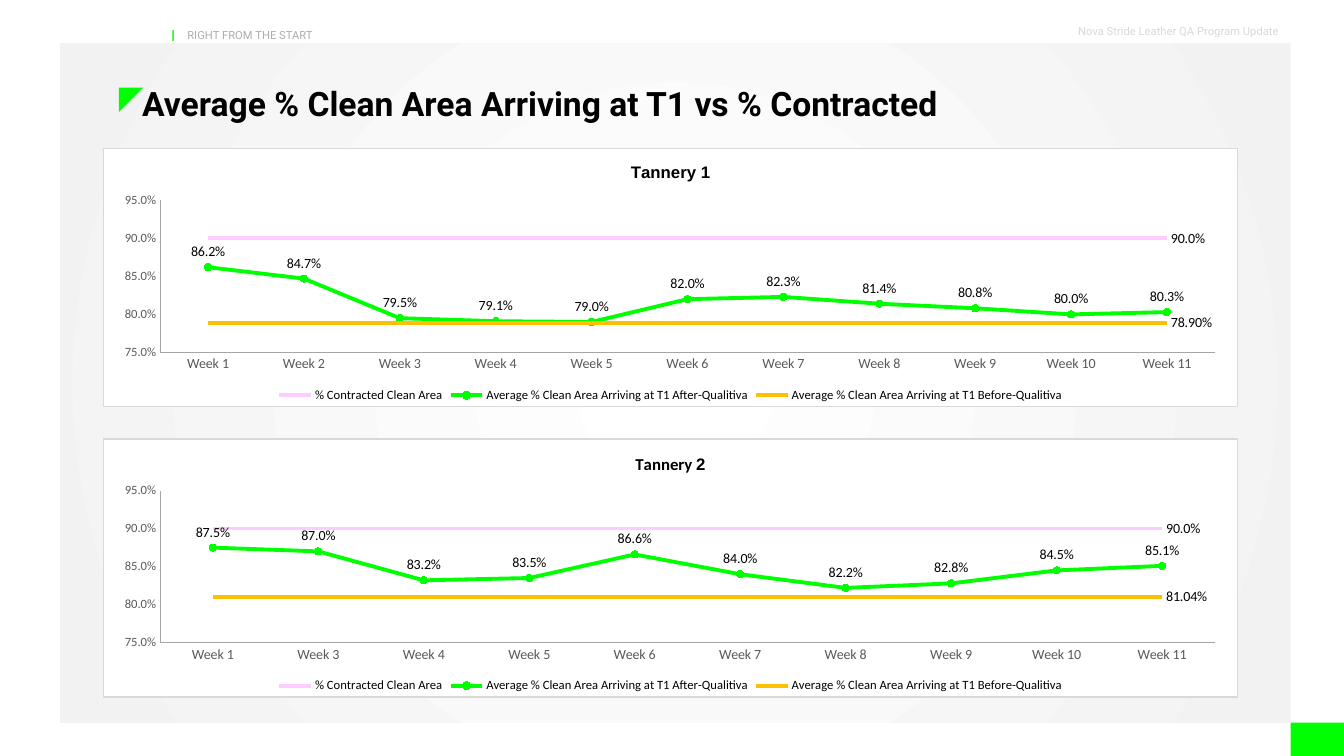
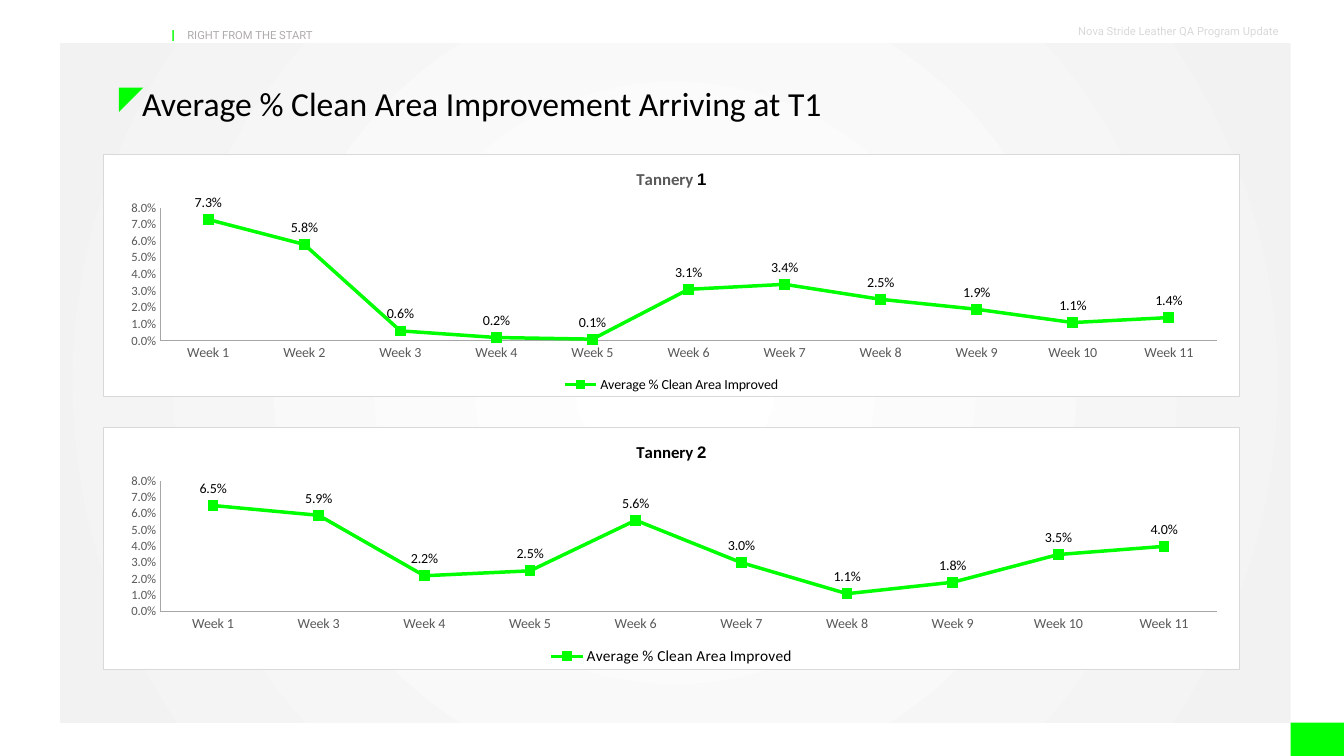
from dataclasses import dataclass

from pptx import Presentation
from pptx.chart.chart import Chart
from pptx.chart.data import CategoryChartData
from pptx.dml.color import RGBColor
from pptx.enum.chart import XL_CHART_TYPE as ChartType
from pptx.enum.chart import XL_LABEL_POSITION as LabelPosition
from pptx.enum.chart import XL_LEGEND_POSITION as LegendPosition
from pptx.enum.chart import XL_MARKER_STYLE as MarkerStyle
from pptx.enum.chart import XL_TICK_MARK as TickMark
from pptx.enum.shapes import MSO_SHAPE as Preset
from pptx.enum.shapes import PP_PLACEHOLDER as PlaceholderType
from pptx.enum.text import MSO_ANCHOR as Anchor
from pptx.enum.text import MSO_AUTO_SIZE as AutoSize
from pptx.enum.text import PP_ALIGN as Align
from pptx.oxml import parse_xml
from pptx.oxml.ns import nsdecls, qn
from pptx.util import Inches, Pt

GREEN, PINK, AMBER = "00FF00", "FFCCFF", "FFC000"
BLACK, WHITE, SMOKE = "000000", "FFFFFF", "F2F2F2"
AXIS_TEXT, AXIS_LINE, BORDER = "595959", "A6A6A6", "D9D9D9"
HEADER_GREY, TAGLINE_GREY = "D9D9D9", "AFABAB"


@dataclass
class Trend:
    name: str
    values: list[float]
    colour: str = GREEN
    width: float = 2.75
    marker: MarkerStyle = MarkerStyle.NONE
    marker_size: int = 5
    number_format: str = "0.0%"
    label_last_only: bool = False


@dataclass
class Scale:
    low: float
    high: float
    step: float


@dataclass
class TanneryChart:
    number: int
    weeks: list[int]
    trends: list[Trend]
    top: float
    plot: tuple[float, float, float, float]
    legend_size: int = 9
    word_font: str = "Calibri"
    word_colour: str = BLACK


@dataclass
class Page:
    title: str
    title_font: str
    title_bold: bool
    width: float
    height: float
    scale: Scale
    charts: list[TanneryChart]


def colour(code: str) -> RGBColor:
    return RGBColor.from_string(code)


def set_font(font, name: str, size: float, code: str, bold: bool = False) -> None:
    font.name, font.size, font.bold = name, Pt(size), bold
    font.color.rgb = colour(code)


def add_block(slide, preset: Preset, left: float, top: float,
              width: float, height: float, code: str):
    block = slide.shapes.add_shape(
        preset, Inches(left), Inches(top), Inches(width), Inches(height))
    block.shadow.inherit = False
    block.line.fill.background()
    block.fill.solid()
    block.fill.fore_color.rgb = colour(code)
    return block


def add_header(slide, text: str, left: float, top: float, width: float,
               size: float, code: str, align: Align = Align.LEFT) -> None:
    box = slide.shapes.add_textbox(
        Inches(left), Inches(top), Inches(width), Inches(0.24))
    box.text_frame.word_wrap = False
    line = box.text_frame.paragraphs[0]
    line.text, line.alignment = text, align
    set_font(line.font, "Roboto", size, code)


def add_glow(panel) -> None:
    """Fill the panel with a round gradient, white in the middle."""
    panel.fill.gradient()
    for stop, code in zip(panel.fill.gradient_stops, (WHITE, SMOKE)):
        stop.color.rgb = colour(code)
    gradient = panel.element.spPr.find(qn("a:gradFill"))
    for linear in gradient.findall(qn("a:lin")):
        gradient.remove(linear)
    gradient.append(parse_xml(
        f'<a:path {nsdecls("a")} path="circle"><a:fillToRect l="50000" '
        't="50000" r="50000" b="50000"/></a:path>'))


def furnish_layout(layout, slide) -> None:
    """Draw the shared frame on the slide, then move it to the layout."""
    for holder in list(layout.placeholders):
        if holder.placeholder_format.type != PlaceholderType.TITLE:
            layout.shapes.element.remove(holder.element)
    add_glow(add_block(slide, Preset.RECTANGLE, 0.59, 0.43, 12.21, 6.74, WHITE))
    add_block(slide, Preset.RECTANGLE, 12.8, 7.17, 0.53, 0.33, GREEN)
    add_header(slide, "Nova Stride Leather QA Program Update",
               10.51, 0.19, 2.36, 8, HEADER_GREY, Align.CENTER)
    add_header(slide, "I", 1.6, 0.21, 0.4, 11, GREEN)
    add_header(slide, "RIGHT FROM THE START", 1.76, 0.23, 1.5, 8, TAGLINE_GREY)
    corner = add_block(slide, Preset.RIGHT_TRIANGLE, 1.18, 0.87, 0.24, 0.24, GREEN)
    corner.element.spPr.find(qn("a:xfrm")).set("flipV", "1")
    for part in list(slide.shapes):
        if not part.is_placeholder:
            layout.shapes.element.append(part.element)


def write_title(slide, page: Page) -> None:
    title = slide.shapes.title
    title.left, title.top = Inches(1.31), Inches(0.77)
    title.width, title.height = Inches(10.95), Inches(0.5)
    frame = title.text_frame
    frame.word_wrap, frame.vertical_anchor = True, Anchor.TOP
    frame.auto_size = AutoSize.SHAPE_TO_FIT_TEXT
    heading = frame.paragraphs[0]
    heading.text, heading.alignment = page.title, Align.JUSTIFY
    set_font(heading.font, page.title_font, 24, BLACK, page.title_bold)


def style_axis(axis, size: float) -> None:
    axis.has_major_gridlines = False
    axis.major_tick_mark = axis.minor_tick_mark = TickMark.NONE
    axis.format.line.color.rgb = colour(AXIS_LINE)
    axis.format.line.width = Pt(0.75)
    set_font(axis.tick_labels.font, "Calibri", size, AXIS_TEXT)


def style_trend(series, trend: Trend) -> None:
    series.smooth = False
    series.format.line.color.rgb = colour(trend.colour)
    series.format.line.width = Pt(trend.width)
    series.marker.style = trend.marker
    if trend.marker != MarkerStyle.NONE:
        series.marker.size = trend.marker_size
        series.marker.format.fill.solid()
        series.marker.format.fill.fore_color.rgb = colour(trend.colour)
        series.marker.format.line.color.rgb = colour(trend.colour)
    labels = series.data_labels
    labels.number_format, labels.number_format_is_linked = trend.number_format, False
    labels.show_value = not trend.label_last_only
    if trend.label_last_only:
        last = series.points[len(trend.values) - 1]
        last.data_label.position = LabelPosition.RIGHT
    else:
        labels.position = LabelPosition.ABOVE


def frame_chart(chart: Chart, plot: tuple[float, float, float, float]) -> None:
    """Give the chart its white card and place the inner plot by fractions."""
    chart_body = chart.element.find(qn("c:chart"))
    chart_body.addnext(parse_xml(
        f'<c:spPr {nsdecls("c", "a")}><a:solidFill><a:srgbClr val="{WHITE}"/>'
        f'</a:solidFill><a:ln w="{Pt(0.75)}"><a:solidFill>'
        f'<a:srgbClr val="{BORDER}"/></a:solidFill></a:ln></c:spPr>'))
    plot_area = chart_body.find(qn("c:plotArea"))
    for old in plot_area.findall(qn("c:layout")):
        plot_area.remove(old)
    sizes = "".join(f'<c:{key} val="{part}"/>' for key, part in zip("xywh", plot))
    plot_area.insert(0, parse_xml(
        f'<c:layout {nsdecls("c")}><c:manualLayout><c:layoutTarget val="inner"/>'
        f'<c:xMode val="edge"/><c:yMode val="edge"/>{sizes}'
        '</c:manualLayout></c:layout>'))


def add_tannery_chart(slide, page: Page, tannery: TanneryChart) -> None:
    figures = CategoryChartData()
    figures.categories = [f"Week {week}" for week in tannery.weeks]
    for trend in tannery.trends:
        figures.add_series(trend.name, trend.values, trend.number_format)
    chart = slide.shapes.add_chart(
        ChartType.LINE_MARKERS, Inches(1.02), Inches(tannery.top),
        Inches(page.width), Inches(page.height), figures).chart
    set_font(chart.font, "Calibri", 10, BLACK)
    frame_chart(chart, tannery.plot)

    heading = chart.chart_title.text_frame.paragraphs[0]
    for text, font, code in (("Tannery ", tannery.word_font, tannery.word_colour),
                             (str(tannery.number), "Arial", BLACK)):
        run = heading.add_run()
        run.text = text
        set_font(run.font, font, 12, code, bold=True)
    chart.chart_title.include_in_layout = False

    chart.has_legend = True
    chart.legend.position = LegendPosition.BOTTOM
    chart.legend.include_in_layout = False
    set_font(chart.legend.font, "Calibri", tannery.legend_size, BLACK)

    style_axis(chart.category_axis, 10)
    percent = chart.value_axis
    style_axis(percent, 9)
    percent.minimum_scale, percent.maximum_scale = page.scale.low, page.scale.high
    percent.major_unit = page.scale.step
    percent.tick_labels.number_format = "0.0%"
    percent.tick_labels.number_format_is_linked = False

    chart.plots[0].vary_by_categories = False
    for series, trend in zip(chart.plots[0].series, tannery.trends):
        style_trend(series, trend)


def clean_area(before: float, after: list[float]) -> list[Trend]:
    arriving, count = "Average % Clean Area Arriving at T1", len(after)
    return [
        Trend("% Contracted Clean Area", [0.9] * count, PINK, label_last_only=True),
        Trend(f"{arriving} After-Qualitiva", after, marker=MarkerStyle.CIRCLE),
        Trend(f"{arriving} Before-Qualitiva", [before] * count, AMBER,
              number_format="0.00%", label_last_only=True),
    ]


def improvement(values: list[float]) -> list[Trend]:
    return [Trend("Average % Clean Area Improved", values, width=2.5,
                  marker=MarkerStyle.SQUARE, marker_size=7)]


TANNERY_1_WEEKS = list(range(1, 12))
TANNERY_2_WEEKS = [week for week in TANNERY_1_WEEKS if week != 2]

PAGES = [
    Page("Average % Clean Area Arriving at T1 vs % Contracted", "Roboto", True,
         11.26, 2.57, Scale(0.75, 0.95, 0.05), [
             TanneryChart(1, TANNERY_1_WEEKS, clean_area(0.789, [
                 0.862, 0.847, 0.795, 0.791, 0.79, 0.82,
                 0.823, 0.814, 0.808, 0.8, 0.803]),
                 1.47, (0.05, 0.2, 0.93, 0.59), word_font="Arial"),
             TanneryChart(2, TANNERY_2_WEEKS, clean_area(0.8104, [
                 0.875, 0.87, 0.832, 0.835, 0.866,
                 0.84, 0.822, 0.828, 0.845, 0.851]),
                 4.35, (0.05, 0.2, 0.93, 0.59)),
         ]),
    Page("Average % Clean Area Improvement Arriving at T1", "Calibri", False,
         11.28, 2.41, Scale(0, 0.08, 0.01), [
             TanneryChart(1, TANNERY_1_WEEKS, improvement([
                 0.073, 0.058, 0.006, 0.002, 0.001, 0.031,
                 0.034, 0.025, 0.019, 0.011, 0.014]),
                 1.53, (0.05, 0.22, 0.93, 0.55), 10, word_colour=AXIS_TEXT),
             TanneryChart(2, TANNERY_2_WEEKS, improvement([
                 0.065, 0.059, 0.022, 0.025, 0.056,
                 0.03, 0.011, 0.018, 0.035, 0.04]),
                 4.24, (0.05, 0.22, 0.93, 0.54), 11),
         ]),
]


def main() -> None:
    deck = Presentation()
    deck.slide_width, deck.slide_height = Inches(13.33), Inches(7.5)
    layout = deck.slide_layouts.get_by_name("Title Only")
    for index, page in enumerate(PAGES):
        slide = deck.slides.add_slide(layout)
        if index == 0:
            furnish_layout(layout, slide)
        write_title(slide, page)
        for tannery in page.charts:
            add_tannery_chart(slide, page, tannery)
    deck.save("out.pptx")


if __name__ == "__main__":
    main()
